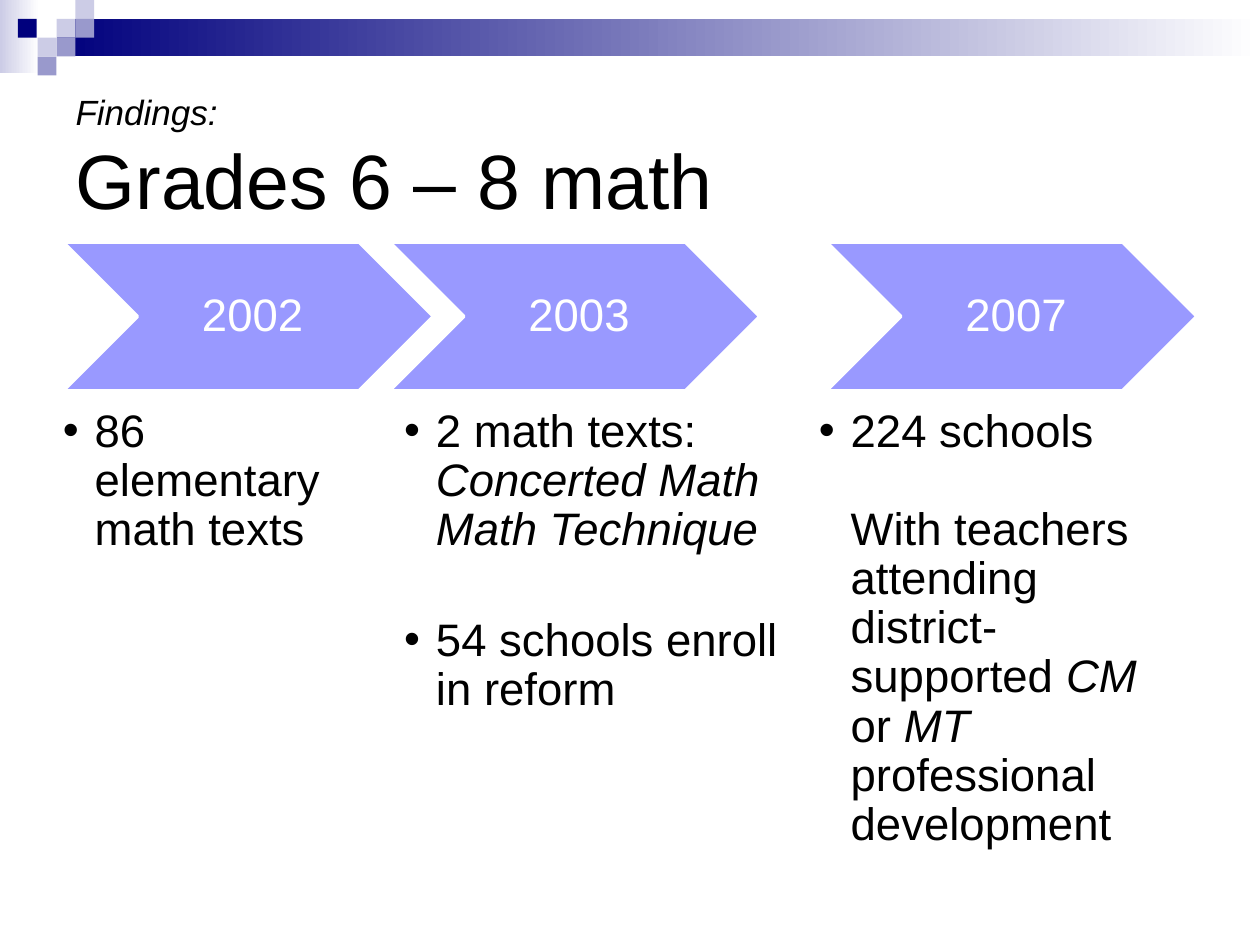
import pptx
import pptx.dml.color
import pptx.enum.dml
import pptx.enum.shapes
import pptx.enum.text
import pptx.oxml
import pptx.oxml.ns
import pptx.util
from pptx.util import Cm, Pt

COLORS = {
    "navy": "00007D",
    "violet": "9999CC",
    "lavender": "CCCCE6",
    "chevron": "9999FF",
    "white": "FFFFFF",
    "black": "000000",
}
SHAPES = pptx.enum.shapes.MSO_SHAPE
ALIGN = pptx.enum.text.PP_ALIGN
ANCHOR = pptx.enum.text.MSO_ANCHOR

BODY = {"size": Pt(26), "italic": False}
BODY_ITALIC = {"size": Pt(26), "italic": True}
INDENT = Cm(0.64)

# Top-left corners of the small mosaic squares
TILES = [
    ("lavender", 1.14, 0.38),
    ("lavender", 1.52, 0),
    ("violet", 1.52, 0.38),
    ("lavender", 0.76, 0.76),
    ("navy", 0.36, 0.38),
    ("violet", 1.14, 0.76),
    ("violet", 0.76, 1.14),
]

# Year, chevron left, text left, text width, and paragraphs.
# A paragraph is (bulleted, gap before in points, lines of runs).
COLUMNS = [
    ("2002", 1.27, 1.27, 5.97, [
        (True, 0, [[("86 elementary math texts", BODY)]]),
    ]),
    ("2003", 7.85, 8.15, 8.03, [
        (True, 0, [
            [("2 math texts:", BODY)],
            [("Concerted Math", BODY_ITALIC)],
            [("Math Technique", BODY_ITALIC)],
        ]),
        (True, 35, [[("54 schools enroll in reform", BODY)]]),
    ]),
    ("2007", 16.66, 16.51, 7.21, [
        (True, 0, [[("224 schools", BODY)]]),
        (False, 28, [[
            ("With teachers attending district-supported ", BODY),
            ("CM", BODY_ITALIC),
            (" or ", BODY),
            ("MT", BODY_ITALIC),
            (" professional development", BODY),
        ]]),
    ]),
]


def rgb(name):
    return pptx.dml.color.RGBColor.from_string(COLORS[name])


def apply_format(target, values):
    for name, value in values.items():
        setattr(target, name, value)


def add_run(paragraph, text, values, color="black"):
    run = paragraph.add_run()
    run.text = text
    apply_format(run.font, {"name": "Arial", **values})
    run.font.color.rgb = rgb(color)


def add_block(slide, kind, left, top, width, height, color):
    shape = slide.shapes.add_shape(
        kind, Cm(left), Cm(top), Cm(width), Cm(height))
    shape.shadow.inherit = False
    shape.fill.solid()
    shape.fill.fore_color.rgb = rgb(color)
    shape.line.fill.background()
    return shape


def add_fading_bar(slide, left, top, width, height, color):
    shape = add_block(
        slide, SHAPES.RECTANGLE, left, top, width, height, color)
    shape.fill.gradient()
    shape.fill.gradient_angle = 0
    for stop, name, position in zip(
            shape.fill.gradient_stops, (color, "white"), (0, 1)):
        stop.color.rgb = rgb(name)
        stop.position = position


def add_header(slide):
    add_fading_bar(slide, 0, 0, 0.79, 1.47, "lavender")
    add_fading_bar(slide, 1.14, 0.38, 24.26, 0.76, "navy")
    for color, left, top in TILES:
        add_block(slide, SHAPES.RECTANGLE, left, top, 0.38, 0.38, color)


def fill_title(slide):
    title = slide.shapes.title
    apply_format(title, {"left": Cm(1.27), "top": Cm(1.27),
                         "width": Cm(22.86), "height": Cm(3.81)})
    frame = title.text_frame
    frame.vertical_anchor = ANCHOR.MIDDLE
    lines = [("Findings:", {"size": Pt(20), "italic": True}),
             ("Grades 6 – 8 math", {"size": Pt(44), "italic": False})]
    for index, (text, values) in enumerate(lines):
        paragraph = frame.add_paragraph() if index else frame.paragraphs[0]
        paragraph.alignment = ALIGN.LEFT
        add_run(paragraph, text, values)


def add_chevron(slide, year, left):
    shape = add_block(
        slide, SHAPES.CHEVRON, left, 4.88, 7.47, 3, "chevron")
    shape.line.color.rgb = rgb("white")
    shape.line.width = Pt(2)
    apply_format(shape.text_frame, {
        "margin_left": Cm(0.28), "margin_right": Cm(0.1),
        "margin_top": Cm(0.1), "margin_bottom": Cm(0.1),
        "vertical_anchor": ANCHOR.MIDDLE, "word_wrap": True})
    paragraph = shape.text_frame.paragraphs[0]
    apply_format(paragraph, {"alignment": ALIGN.CENTER, "line_spacing": 0.9})
    add_run(paragraph, year, BODY, "white")


def set_indent(paragraph, bulleted):
    properties = paragraph._p.get_or_add_pPr()
    properties.set("marL", str(INDENT))
    properties.set("indent", str(-INDENT if bulleted else 0))
    if bulleted:
        namespace = pptx.oxml.ns.nsdecls("a")
        for tag in ('buFont %s typeface="Arial"', 'buChar %s char="•"'):
            properties.append(pptx.oxml.parse_xml(f"<a:{tag % namespace}/>"))


def add_findings(slide, left, width, paragraphs):
    box = slide.shapes.add_textbox(Cm(left), Cm(8.23), Cm(width), Cm(10.59))
    frame = box.text_frame
    apply_format(frame, {"margin_left": 0, "margin_right": 0,
                         "margin_top": 0, "margin_bottom": 0,
                         "word_wrap": True})
    for index, (bulleted, gap, lines) in enumerate(paragraphs):
        paragraph = frame.add_paragraph() if index else frame.paragraphs[0]
        apply_format(paragraph, {"alignment": ALIGN.LEFT,
                                 "line_spacing": 0.9,
                                 "space_before": Pt(gap)})
        set_indent(paragraph, bulleted)
        for number, line in enumerate(lines):
            if number:
                paragraph.add_line_break()
            for text, values in line:
                add_run(paragraph, text, values)


def main():
    presentation = pptx.Presentation()
    presentation.slide_width = Cm(25.4)
    presentation.slide_height = Cm(19.05)
    slide = presentation.slides.add_slide(presentation.slide_layouts[5])

    # Header band and title
    add_header(slide)
    fill_title(slide)

    # Timeline with findings below each year
    for year, chevron_left, text_left, text_width, paragraphs in COLUMNS:
        add_chevron(slide, year, chevron_left)
        add_findings(slide, text_left, text_width, paragraphs)

    presentation.save("out.pptx")


if __name__ == "__main__":
    main()
